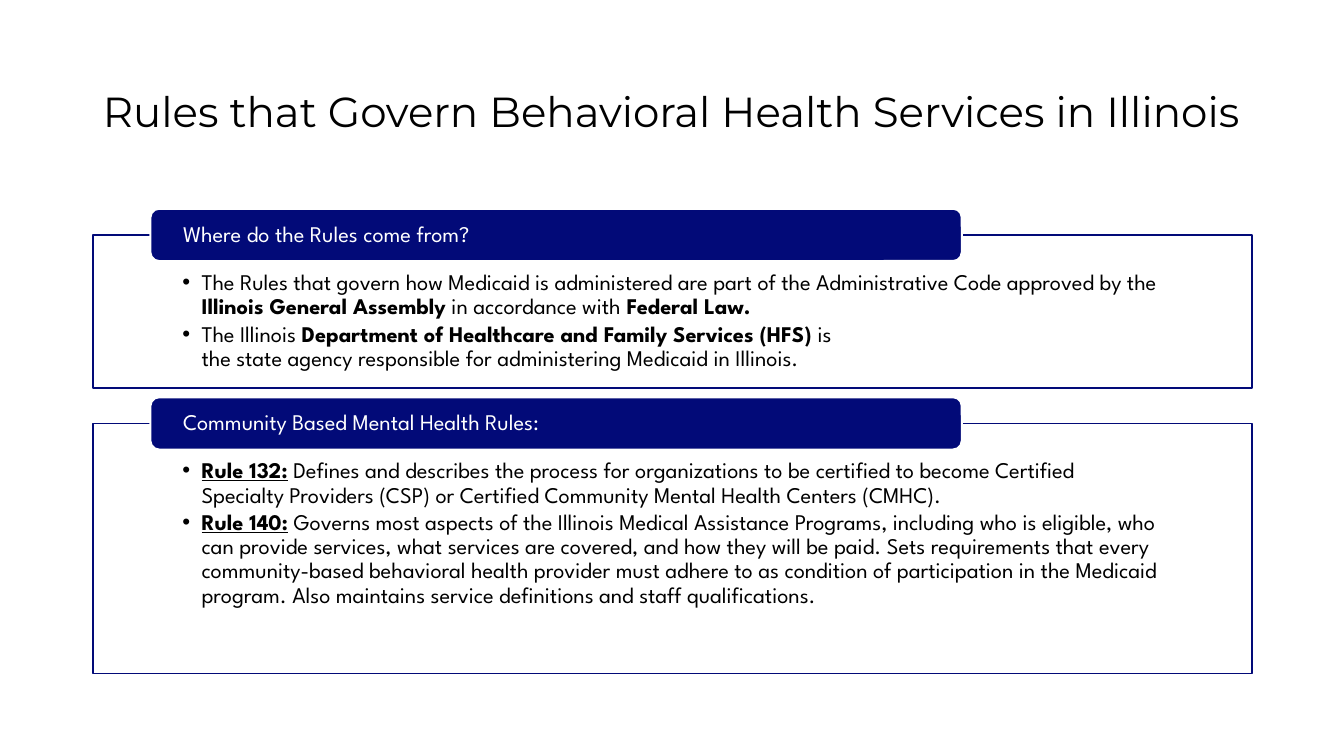
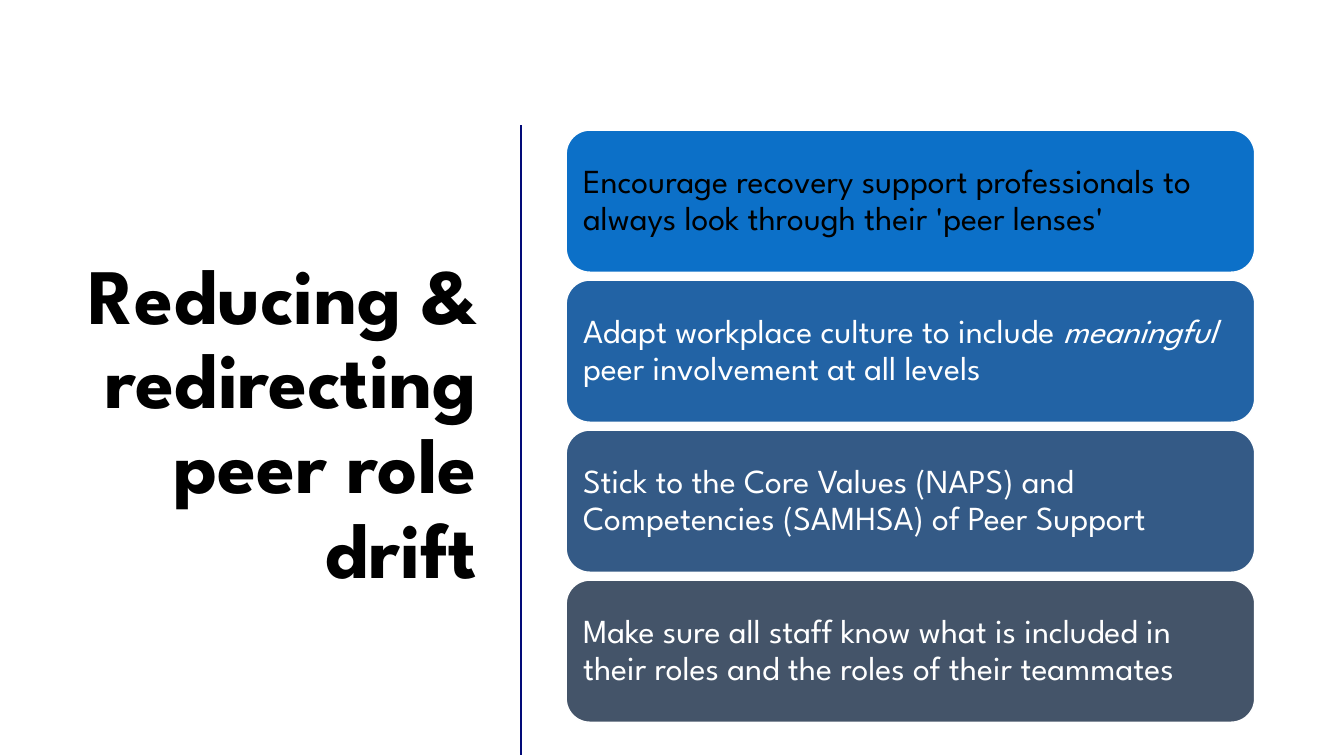
from lxml.etree import SubElement
from pptx import Presentation
from pptx.dml.color import RGBColor
from pptx.enum.shapes import MSO_CONNECTOR, MSO_SHAPE
from pptx.enum.text import MSO_ANCHOR, MSO_AUTO_SIZE, PP_ALIGN
from pptx.oxml.ns import qn
from pptx.util import Cm, Pt

BODY_FONT = "League Spartan"
TITLE_FONT = "Montserrat"
NAVY, WHITE, BLACK = "020A78", "FFFFFF", "000000"
CARD_FILLS = ["0C70C8", "2263A5", "345A86", "445469"]
BREAK = ("", "break")


def rgb(value):
    """Turn a hex string into a colour."""
    return RGBColor.from_string(value)


def setup_frame(tf, anchor, insets):
    """Set wrapping, anchoring and the left, top, right, bottom insets in cm."""
    tf.word_wrap = True
    tf.auto_size = MSO_AUTO_SIZE.NONE
    tf.vertical_anchor = anchor
    tf.margin_left, tf.margin_top, tf.margin_right, tf.margin_bottom = map(Cm, insets)


def write_runs(p, runs, size, color, font=BODY_FONT, align=PP_ALIGN.LEFT):
    """Fill a paragraph with (text, style) runs; style letters are b, i and u."""
    p.alignment = align
    p.line_spacing = 0.9
    for text, style in runs:
        if style == "break":
            p.add_line_break()
            continue
        r = p.add_run()
        r.text = text
        r.font.name = font
        r.font.size = Pt(size)
        r.font.color.rgb = rgb(color)
        r.font.bold = "b" in style
        r.font.italic = "i" in style
        r.font.underline = "u" in style


def add_bullet(p):
    """Give a paragraph a hanging bullet."""
    pPr = p._p.get_or_add_pPr()
    pPr.set("marL", str(Cm(0.48)))
    pPr.set("indent", str(-Cm(0.48)))
    SubElement(pPr, qn("a:buFont"), typeface="Arial")
    SubElement(pPr, qn("a:buChar"), char="•")


def add_box(s, kind, box, fill, line, width):
    """Add a flat filled shape in a box given in cm."""
    sp = s.shapes.add_shape(kind, *map(Cm, box))
    sp.shadow.inherit = False
    sp.fill.solid()
    sp.fill.fore_color.rgb = rgb(fill)
    sp.line.color.rgb = rgb(line)
    sp.line.width = Pt(width)
    return sp


def add_titled_slide(prs, box, text, size, font, align, style=""):
    """Add a title-only slide and place its title."""
    s = prs.slides.add_slide(prs.slide_layouts[5])
    title = s.shapes.title
    title.left, title.top, title.width, title.height = map(Cm, box)
    setup_frame(title.text_frame, MSO_ANCHOR.MIDDLE, (0.25, 0.13, 0.25, 0.13))
    write_runs(title.text_frame.paragraphs[0], [(text, style)], size, BLACK, font, align)
    return s


def add_panel(s, box, heading, bullets):
    """Add an outlined panel of bullets with a heading tab on its top edge."""
    left, top = box[:2]
    sp = add_box(s, MSO_SHAPE.RECTANGLE, box, WHITE, NAVY, 1)
    tf = sp.text_frame
    setup_frame(tf, MSO_ANCHOR.TOP, (2.26, 0.91, 2.26, 0.3))
    for i, runs in enumerate(bullets):
        p = tf.add_paragraph() if i else tf.paragraphs[0]
        p.space_after = Pt(2.4)
        p.line_spacing = 0.9
        add_bullet(p)
        write_runs(p, runs, 16, BLACK)
    tab = add_box(s, MSO_SHAPE.ROUNDED_RECTANGLE,
                  (left + 1.45, top - 0.66, 20.45, 1.32), NAVY, WHITE, 1.5)
    setup_frame(tab.text_frame, MSO_ANCHOR.MIDDLE, (0.76, 0, 0.76, 0))
    write_runs(tab.text_frame.paragraphs[0], [(heading, "")], 16, WHITE)


def add_cards(s, box, gap, cards):
    """Stack equal rounded cards down a box."""
    left, top, width, height = box
    card_height = (height - gap * (len(cards) - 1)) / len(cards)
    for i, (fill, runs) in enumerate(zip(CARD_FILLS, cards)):
        sp = add_box(s, MSO_SHAPE.ROUNDED_RECTANGLE,
                     (left, top + i * (card_height + gap), width, card_height),
                     fill, WHITE, 1)
        setup_frame(sp.text_frame, MSO_ANCHOR.MIDDLE, (0.25,) * 4)
        write_runs(sp.text_frame.paragraphs[0], runs, 24, WHITE if i else BLACK)


def add_divider(s, x, top, bottom):
    """Add a vertical navy line."""
    line = s.shapes.add_connector(MSO_CONNECTOR.STRAIGHT, Cm(x), Cm(top), Cm(x), Cm(bottom))
    line.line.color.rgb = rgb(NAVY)
    line.line.width = Pt(2)
    SubElement(line._element.spPr, qn("a:effectLst"))


def build_rules_slide(prs):
    """Build the slide on the rules for behavioral health services."""
    s = add_titled_slide(prs, (2.34, 1.02, 29.21, 3.68),
                         "Rules that Govern Behavioral Health Services in Illinois",
                         30, TITLE_FONT, PP_ALIGN.LEFT)
    add_panel(s, (2.34, 5.92, 29.21, 3.86), "Where do the Rules come from?", [
        [("The Rules that govern how Medicaid is administered are part of the "
          "Administrative Code approved by the", ""),
         (" Illinois General Assembly", "b"),
         (" in accordance with", ""),
         (" Federal Law.", "b")],
        [("The Illinois ", ""),
         ("Department of Healthcare and Family Services (HFS)", "b"),
         (" is", ""),
         BREAK,
         ("the state agency responsible for administering Medicaid in Illinois.", "")],
    ])
    add_panel(s, (2.34, 10.67, 29.21, 6.3), "Community Based Mental Health Rules:", [
        [("Rule 132:", "bu"),
         (" Defines and describes the process for organizations to be certified to "
          "become Certified Specialty Providers (CSP) or Certified Community Mental "
          "Health Centers (CMHC).", "")],
        [("Rule 140:", "bu"),
         (" Governs most aspects of the Illinois Medical Assistance Programs, including "
          "who is eligible, who can provide services, what services are covered, and how "
          "they will be paid. Sets requirements that every community-based behavioral "
          "health provider must adhere to as condition of participation in the Medicaid "
          "program. Also maintains service definitions and staff qualifications.", "")],
    ])


def build_drift_slide(prs):
    """Build the slide on reducing peer role drift."""
    s = add_titled_slide(prs, (1.32, 2.97, 10.95, 15.52),
                         "Reducing & redirecting peer role drift",
                         56, BODY_FONT, PP_ALIGN.RIGHT, "b")
    add_divider(s, 13.13, 3.15, 19.02)
    add_cards(s, (14.27, 3.28, 17.35, 14.92), 0.2, [
        [("Encourage recovery support professionals to always look through their "
          "'peer lenses'", "")],
        [("Adapt workplace culture to include ", ""),
         ("meaningful", "i"),
         (" peer involvement at all levels", "")],
        [("Stick to the Core Values (NAPS) and Competencies (SAMHSA) of Peer Support", "")],
        [("Make sure all staff know what is included in their roles and the roles of "
          "their teammates", "")],
    ])


def main():
    """Build and save the presentation."""
    prs = Presentation()
    prs.slide_width, prs.slide_height = Cm(33.87), Cm(19.05)
    build_rules_slide(prs)
    build_drift_slide(prs)
    prs.save("out.pptx")


if __name__ == "__main__":
    main()
